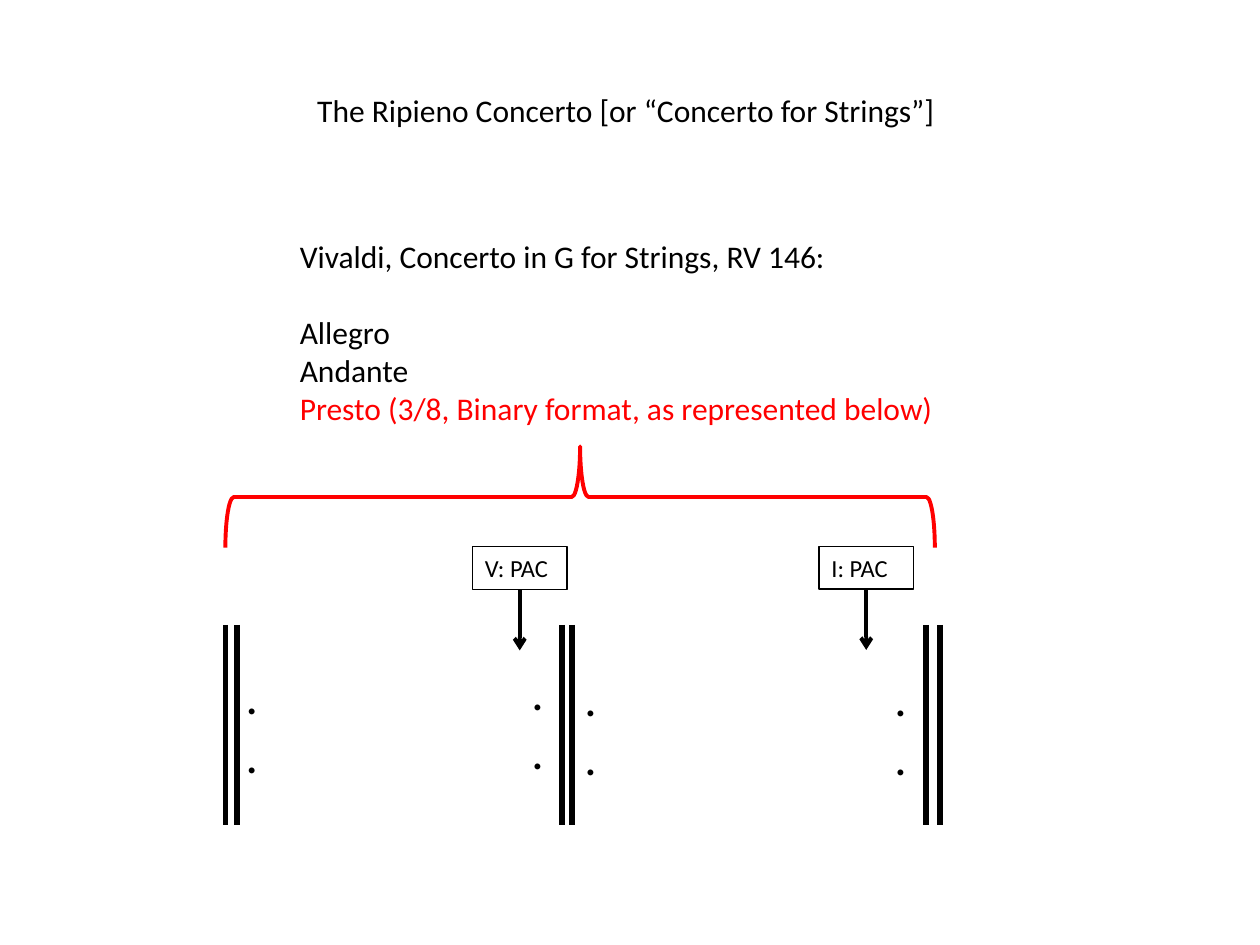
import pptx
import pptx.util
import pptx.dml.color
import pptx.enum.shapes
import pptx.enum.text
import pptx.oxml
import pptx.oxml.ns
from lxml import etree

Pt = pptx.util.Pt
BLACK, RED = "000000", "FF0000"
FONT = "Calibri"

# text, colour, space before
TITLE = [("The Ripieno Concerto [or “Concerto for Strings”]", BLACK, 0)]
WORK = [
    ("Vivaldi, Concerto in G for Strings, RV 146:", BLACK, 0),
    ("Allegro", BLACK, 22),
    ("Andante", BLACK, 0),
    ("Presto (3/8, Binary format, as represented below)", RED, 0),
]
REPEAT_DOTS = [(".", BLACK, 0)] * 2

BARLINES = [128.9, 135.4, 321.1, 326.9, 529.2, 537.1]
BAR_TOP, BAR_BOTTOM = 357.1, 471.6
DOT_PLACES = [(133.2, 376.6), (296.6, 374.4), (326.9, 378), (504, 378)]
CADENCES = [("V: PAC", 270, 312.5), ("I: PAC", 468, 312.2)]
CADENCE_WIDTH, CADENCE_HEIGHT, ARROW_LENGTH = 54, 24.5, 34.7
BRACE_LEFT, BRACE_TOP, BRACE_SPAN, BRACE_DEPTH = 128.8, 255.1, 405.4, 57.8


def color(value):
    return pptx.dml.color.RGBColor.from_string(value)


def add_text(slide, lines, left, top, width, height, size):
    box = slide.shapes.add_textbox(Pt(left), Pt(top), Pt(width), Pt(height))
    frame = box.text_frame
    frame.word_wrap = True
    frame.auto_size = pptx.enum.text.MSO_AUTO_SIZE.SHAPE_TO_FIT_TEXT
    for index, (words, ink, gap) in enumerate(lines):
        paragraph = frame.add_paragraph() if index else frame.paragraphs[0]
        paragraph.space_before = Pt(gap)
        run = paragraph.add_run()
        run.text = words
        run.font.name = FONT
        run.font.size = Pt(size)
        run.font.color.rgb = color(ink)
    return box


def set_line(part, ink, weight):
    part.line.color.rgb = color(ink)
    part.line.width = Pt(weight)


def add_vertical(slide, x, top, bottom, weight, arrow=False):
    stroke = slide.shapes.add_connector(
        pptx.enum.shapes.MSO_CONNECTOR.STRAIGHT, Pt(x), Pt(top), Pt(x), Pt(bottom))
    set_line(stroke, BLACK, weight)
    if arrow:
        etree.SubElement(stroke.line._get_or_add_ln(),
                         pptx.oxml.ns.qn("a:tailEnd"), type="arrow")
    etree.SubElement(stroke._element.spPr, pptx.oxml.ns.qn("a:effectLst"))


def add_brace(slide):
    left = BRACE_LEFT + (BRACE_SPAN - BRACE_DEPTH) / 2
    top = BRACE_TOP + (BRACE_DEPTH - BRACE_SPAN) / 2
    brace = slide.shapes.add_shape(
        pptx.enum.shapes.MSO_SHAPE.RIGHT_BRACE,
        Pt(left), Pt(top), Pt(BRACE_DEPTH), Pt(BRACE_SPAN))
    brace.rotation = 270
    brace.shadow.inherit = False
    brace.fill.background()
    set_line(brace, RED, 2.25)


def main():
    deck = pptx.Presentation()
    deck.slide_width, deck.slide_height = Pt(720), Pt(540)
    slide = deck.slides.add_slide(deck.slide_layouts[6])

    add_text(slide, WORK, 164.2, 131.8, 414, 116.6, 18)
    for x in BARLINES:
        add_vertical(slide, x, BAR_TOP, BAR_BOTTOM, 3)
    for left, top in DOT_PLACES:
        add_text(slide, REPEAT_DOTS, left, top, 30.2, 75, 28)
    for label, left, top in CADENCES:
        cadence = add_text(slide, [(label, BLACK, 0)], left, top,
                           CADENCE_WIDTH, CADENCE_HEIGHT, 14)
        set_line(cadence, BLACK, 0.75)
        arrow_top = top + CADENCE_HEIGHT
        add_vertical(slide, left + CADENCE_WIDTH / 2, arrow_top,
                     arrow_top + ARROW_LENGTH, 2.25, arrow=True)
    add_text(slide, TITLE, 174.2, 48.2, 378, 29, 18)
    add_brace(slide)

    deck.save("out.pptx")


if __name__ == "__main__":
    main()
